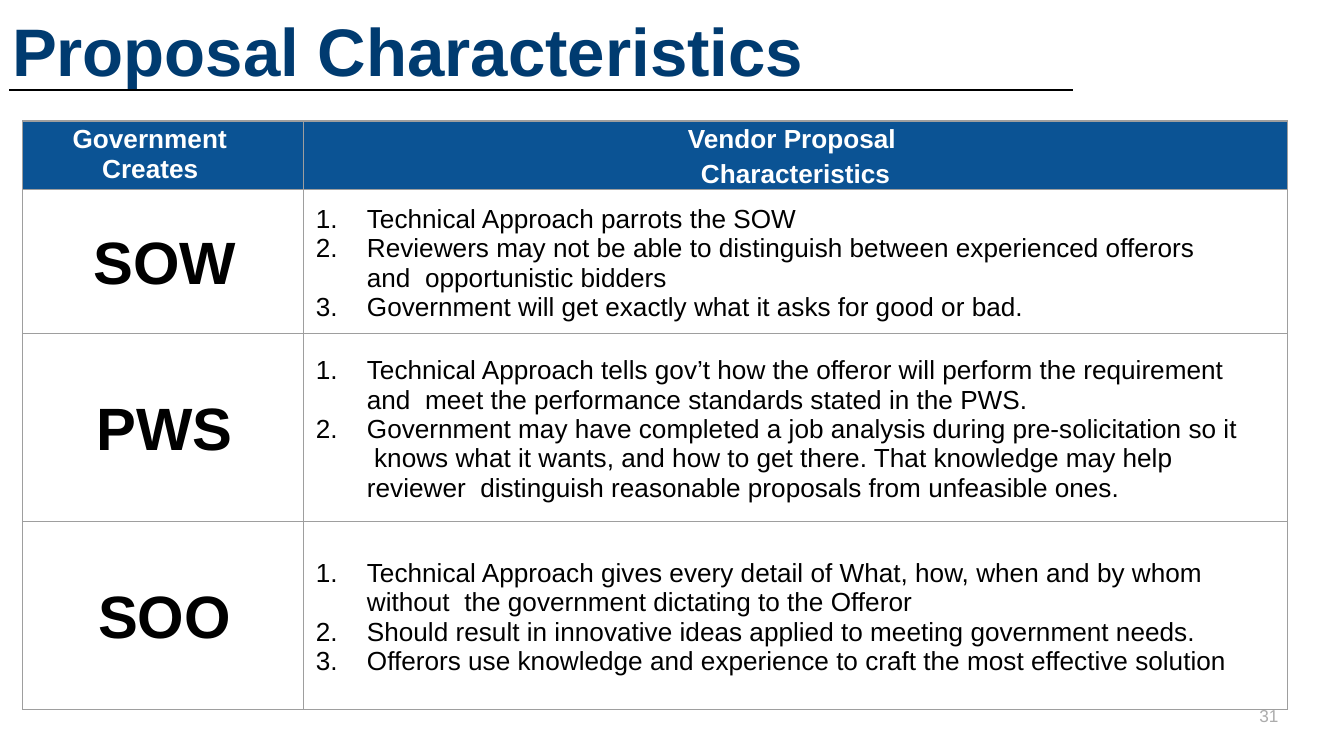
from pptx import Presentation
from pptx.dml.color import RGBColor
from pptx.enum.shapes import MSO_CONNECTOR
from pptx.enum.text import MSO_ANCHOR, MSO_AUTO_SIZE, PP_ALIGN
from pptx.oxml.ns import qn
from pptx.util import Inches, Pt
from lxml.etree import SubElement

NAVY = RGBColor(0x00, 0x3B, 0x70)
HEADER_BLUE = RGBColor(0x0B, 0x53, 0x94)
BORDER_GRAY = RGBColor(0x9E, 0x9E, 0x9E)
NUMBER_GRAY = RGBColor(0xAC, 0xAC, 0xAC)
WHITE = RGBColor(0xFF, 0xFF, 0xFF)
BLACK = RGBColor(0, 0, 0)

COLUMN_WIDTHS = (2.09, 7.32)
ROW_HEIGHTS = (0.45, 1.07, 1.4, 1.4)
HEADINGS = ("Government  Creates", "Vendor Proposal \nCharacteristics")
CHARACTERISTICS = {
    "SOW": (
        "Technical Approach parrots the SOW",
        "Reviewers may not be able to distinguish between experienced offerors and  opportunistic bidders",
        "Government will get exactly what it asks for good or bad.",
    ),
    "PWS": (
        "Technical Approach tells gov’t how the offeror will perform the requirement and  meet the "
        "performance standards stated in the PWS.",
        "Government may have completed a job analysis during pre-solicitation so it  knows what it wants, "
        "and how to get there. That knowledge may help reviewer  distinguish reasonable proposals from "
        "unfeasible ones.",
    ),
    "SOO": (
        "Technical Approach gives every detail of What, how, when and by whom without  the government "
        "dictating to the Offeror",
        "Should result in innovative ideas applied to meeting government needs.",
        "Offerors use knowledge and experience to craft the most effective solution",
    ),
}


def style_paragraph(paragraph, size, color, bold=False, align=PP_ALIGN.LEFT, left=0, indent=0, right=0):
    paragraph.alignment = align
    properties = paragraph._p.get_or_add_pPr()
    properties.set("marL", str(Inches(left)))
    properties.set("marR", str(Inches(right)))
    properties.set("indent", str(Inches(indent)))
    for run in paragraph.runs:
        run.font.name = "Arial"
        run.font.size = Pt(size)
        run.font.bold = bold
        run.font.color.rgb = color


def number_paragraph(paragraph):
    properties = paragraph._p.get_or_add_pPr()
    bullet_color = SubElement(properties, qn("a:buClr"))
    SubElement(bullet_color, qn("a:srgbClr"), val=str(BLACK))
    SubElement(properties, qn("a:buAutoNum"), type="arabicPeriod")


def set_margins(frame, top=0):
    frame.margin_left = frame.margin_right = frame.margin_bottom = 0
    frame.margin_top = Inches(top)


def prepare_cell(cell, text, anchor, fill=None):
    """Set the text, margins, borders and fill of a cell and return its paragraphs."""
    cell.text_frame.text = text
    set_margins(cell, 0.03)
    cell.vertical_anchor = anchor
    properties = cell._tc.get_or_add_tcPr()
    for side in ("lnL", "lnR", "lnT", "lnB"):
        border = SubElement(properties, qn(f"a:{side}"), w=str(Pt(0.75)))
        SubElement(SubElement(border, qn("a:solidFill")), qn("a:srgbClr"), val=str(BORDER_GRAY))
    if fill is None:
        cell.fill.background()
    else:
        cell.fill.solid()
        cell.fill.fore_color.rgb = fill
    return cell.text_frame.paragraphs


def add_title(slide, left, top, width, height):
    title = slide.shapes.title
    title.left, title.top = Inches(left), Inches(top)
    title.width, title.height = Inches(width), Inches(height)
    frame = title.text_frame
    frame.text = "Proposal Characteristics"
    frame.auto_size = MSO_AUTO_SIZE.NONE
    frame.vertical_anchor = MSO_ANCHOR.TOP
    set_margins(frame, 0.01)
    style_paragraph(frame.paragraphs[0], 36, NAVY, bold=True, left=0.01)

    rule_y = Inches(top + height - 0.01)
    rule = slide.shapes.add_connector(
        MSO_CONNECTOR.STRAIGHT, Inches(left - 0.01), rule_y, Inches(left + 7.9), rule_y)
    rule.line.color.rgb = BLACK
    rule.line.width = Pt(1.5)
    SubElement(rule._element.spPr, qn("a:effectLst"))


def add_characteristics_table(slide, left, top):
    table = slide.shapes.add_table(
        len(ROW_HEIGHTS), len(COLUMN_WIDTHS), Inches(left), Inches(top),
        Inches(sum(COLUMN_WIDTHS)), Inches(sum(ROW_HEIGHTS))).table
    table.horz_banding = False
    for column, width in zip(table.columns, COLUMN_WIDTHS):
        column.width = Inches(width)
    for row, height in zip(table.rows, ROW_HEIGHTS):
        row.height = Inches(height)

    creates, vendor = (
        prepare_cell(table.cell(0, column), heading, MSO_ANCHOR.TOP, HEADER_BLUE)
        for column, heading in enumerate(HEADINGS))
    style_paragraph(creates[0], 14, WHITE, bold=True, left=0.59, indent=-0.22)
    for paragraph in vendor:
        style_paragraph(paragraph, 14, WHITE, bold=True, align=PP_ALIGN.CENTER)
    vendor[1].space_before = Pt(3.1)

    for row, (document, points) in enumerate(CHARACTERISTICS.items(), start=1):
        label = prepare_cell(table.cell(row, 0), document, MSO_ANCHOR.MIDDLE)[0]
        style_paragraph(label, 32, BLACK, bold=True, align=PP_ALIGN.CENTER, left=0.02)
        for point in prepare_cell(table.cell(row, 1), "\n".join(points), MSO_ANCHOR.MIDDLE):
            style_paragraph(point, 14, BLACK, left=0.47, indent=-0.38, right=0.35)
            number_paragraph(point)


def add_page_number(slide, left, top, width, height):
    frame = slide.shapes.add_textbox(
        Inches(left), Inches(top), Inches(width), Inches(height)).text_frame
    frame.word_wrap = True
    frame.text = "31"
    set_margins(frame)
    style_paragraph(frame.paragraphs[0], 9.2, NUMBER_GRAY, left=0.04)


def main():
    presentation = Presentation()
    presentation.slide_width = Inches(10)
    presentation.slide_height = presentation.slide_width * 9 // 16
    slide = presentation.slides.add_slide(presentation.slide_layouts.get_by_name("Title Only"))
    add_title(slide, 0.08, 0.06, 8.44, 0.62)
    add_characteristics_table(slide, 0.17, 0.9)
    add_page_number(slide, 9.33, 5.25, 0.47, 0.15)
    presentation.save("out.pptx")


if __name__ == "__main__":
    main()
